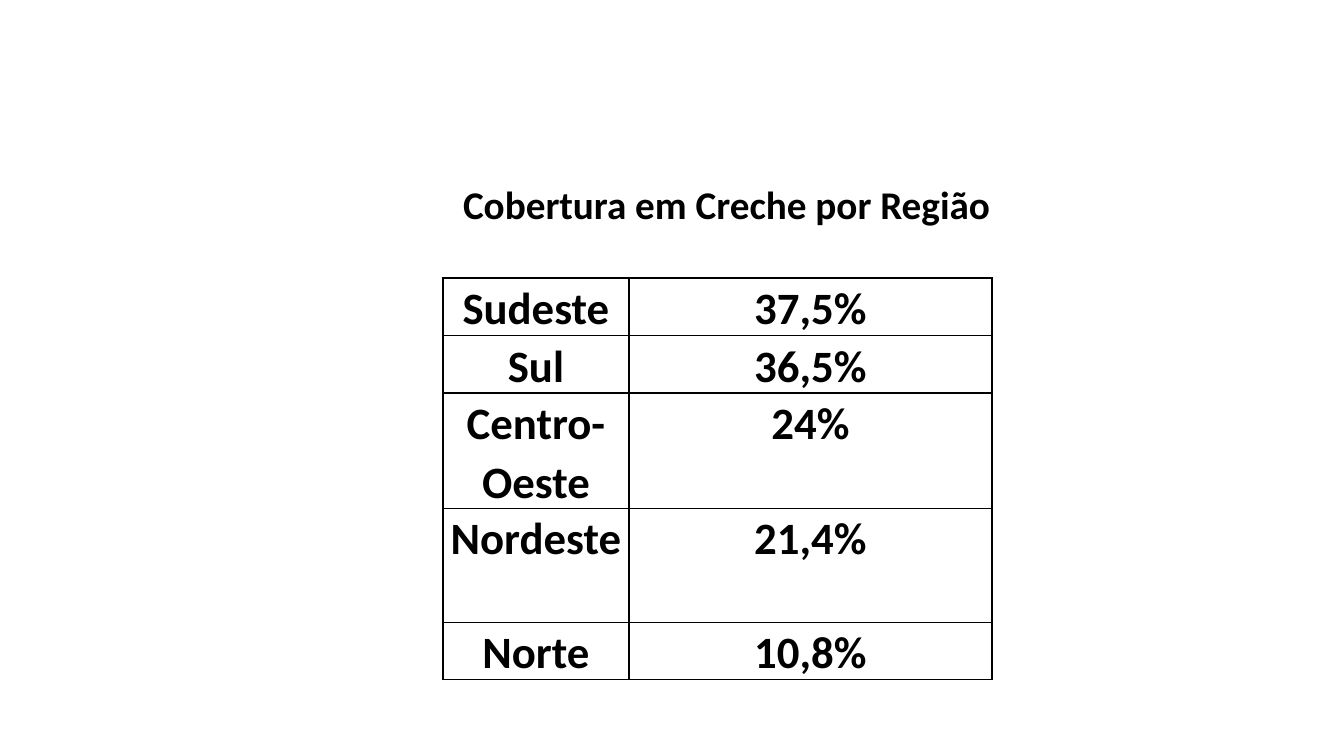
from lxml.etree import SubElement
from pptx import Presentation
from pptx.dml.color import RGBColor
from pptx.enum.text import MSO_ANCHOR, PP_ALIGN
from pptx.oxml.ns import qn
from pptx.util import Emu, Pt

COLORS = {"text": "000000", "border": "000000", "background": "FFFFFF"}
FONT = "Calibri"
EMU_PER_PX = 914400 / 100.8

COVERAGE = [
    ("Sudeste", "37,5%"),
    ("Sul", "36,5%"),
    ("Centro-Oeste", "24%"),
    ("Nordeste", "21,4%"),
    ("Norte", "10,8%"),
]
COLUMN_WIDTHS = [186, 363]
ROW_HEIGHTS = [55, 55, 114, 114, 55]


def px(length):
    return Emu(round(length * EMU_PER_PX))


def color(name):
    return RGBColor.from_string(COLORS[name])


def write_centered(paragraph, text, size, line_spacing):
    paragraph.text = text
    paragraph.alignment = PP_ALIGN.CENTER
    paragraph.line_spacing = line_spacing
    font = paragraph.font
    font.name, font.size, font.bold = FONT, Pt(size), True
    font.color.rgb = color("text")


def add_heading(page, text, left, top, width, height, indent):
    box = page.shapes.add_textbox(px(left), px(top), px(width), px(height))
    frame = box.text_frame
    frame.word_wrap = True
    frame.margin_left = px(indent)
    paragraph = frame.paragraphs[0]
    write_centered(paragraph, text, 28, 0.9)
    paragraph.space_before = Pt(10)


def add_borders(cell):
    properties = cell._tc.get_or_add_tcPr()
    for position, side in enumerate(("lnL", "lnR", "lnT", "lnB")):
        line = SubElement(properties, qn(f"a:{side}"), w=str(Pt(1)))
        fill = SubElement(line, qn("a:solidFill"))
        SubElement(fill, qn("a:srgbClr"), val=COLORS["border"])
        properties.insert(position, line)  # borders precede the cell fill


def fill_cell(cell, text):
    cell.fill.solid()
    cell.fill.fore_color.rgb = color("background")
    cell.margin_left = cell.margin_right = px(7)
    cell.margin_top = cell.margin_bottom = 0
    cell.vertical_anchor = MSO_ANCHOR.TOP
    write_centered(cell.text_frame.paragraphs[0], text, 32, 1.07)
    add_borders(cell)


def add_coverage_table(page, left, top):
    table = page.shapes.add_table(
        len(COVERAGE), len(COLUMN_WIDTHS), px(left), px(top),
        px(sum(COLUMN_WIDTHS)), px(sum(ROW_HEIGHTS)),
    ).table
    table.first_row = table.horz_banding = False
    for column, width in zip(table.columns, COLUMN_WIDTHS):
        column.width = px(width)
    for row, height, texts in zip(table.rows, ROW_HEIGHTS, COVERAGE):
        row.height = px(height)
        for cell, text in zip(row.cells, texts):
            fill_cell(cell, text)


def main():
    deck = Presentation()
    deck.slide_width, deck.slide_height = px(1344), px(756)
    page = deck.slides.add_slide(deck.slide_layouts[6])

    # Heading, indented to stand over the table
    add_heading(page, "Cobertura em Creche por Região", 191, 181, 1010, 466, 71)

    # Coverage by region
    add_coverage_table(page, 443, 278)

    deck.save("out.pptx")


if __name__ == "__main__":
    main()
